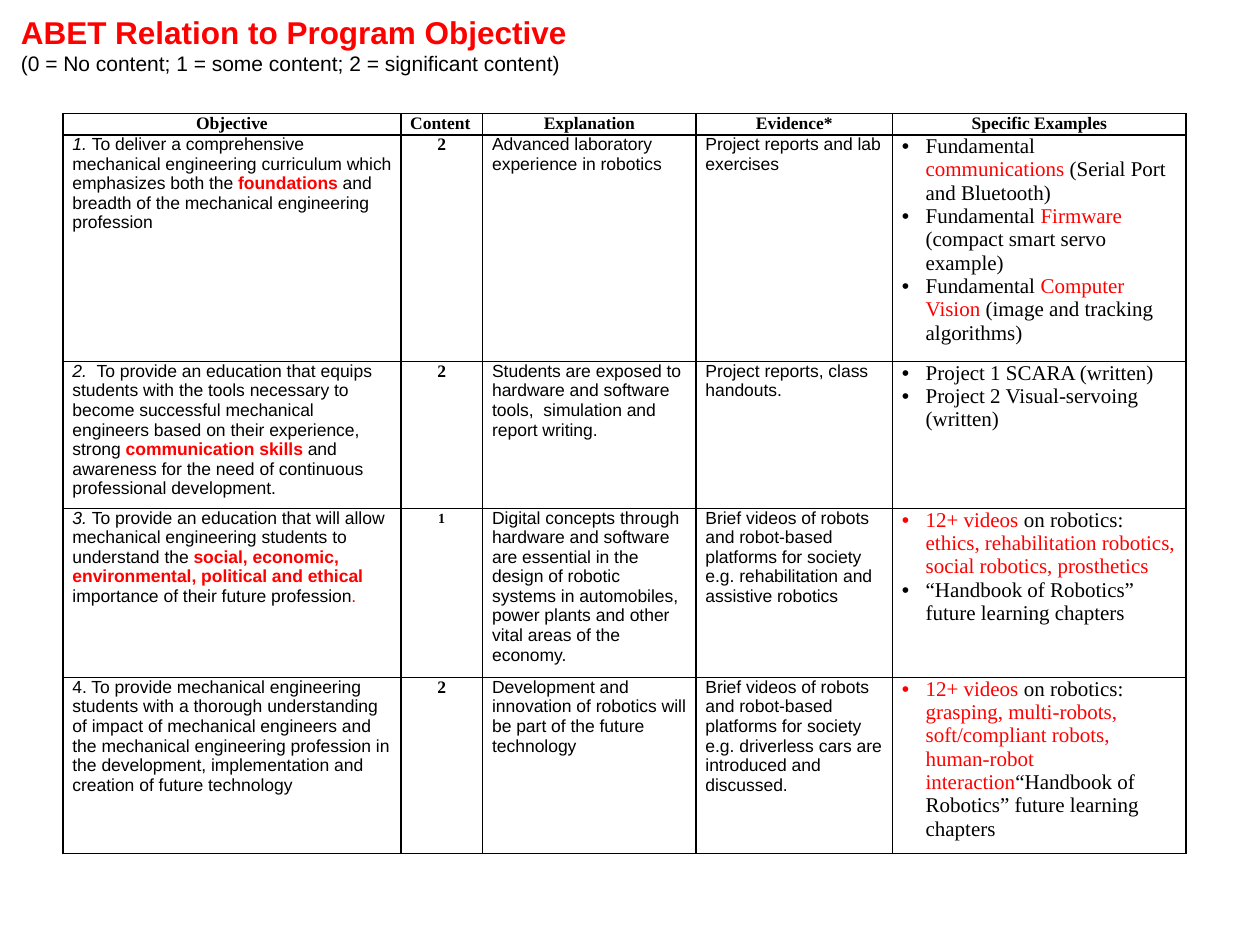
from lxml import etree
from pptx import Presentation
from pptx.dml.color import RGBColor
from pptx.enum import text
from pptx.oxml import ns
from pptx.util import Cm, Pt

COLORS = {"red": "FF0000", "black": "000000"}
SANS, SERIF = "Arial", "Times New Roman"

TITLE = [
    ("ABET Relation to Program Objective", 18, "red bold"),
    ("(0 = No content; 1 = some content; 2 = significant content)", 12, ""),
]
HEADERS = ["Objective", "Content", "Explanation", "Evidence*", "Specific Examples"]
ROWS = [
    {
        "objective": [
            ("1. ", "italic"),
            ("To deliver a comprehensive mechanical engineering curriculum which emphasizes both the ", ""),
            ("foundations ", "red bold"),
            ("and breadth of the mechanical engineering profession", ""),
        ],
        "content": ("2", "bold"),
        "explanation": "Advanced laboratory experience in robotics",
        "evidence": "Project reports and lab exercises",
        "examples": [
            [("Fundamental ", ""), ("communications", "red"), (" (Serial Port and Bluetooth)", "")],
            [("Fundamental ", ""), ("Firmware ", "red"), ("(compact smart servo example)", "")],
            [("Fundamental ", ""), ("Computer Vision", "red"), (" (image and tracking algorithms)", "")],
        ],
    },
    {
        "objective": [
            ("2.  ", "italic"),
            ("To provide an education that equips students with the tools necessary to become "
             "successful mechanical engineers based on their experience, strong ", ""),
            ("communication skills ", "red bold"),
            ("and awareness for the need of continuous professional development.", ""),
        ],
        "content": ("2", "bold"),
        "explanation": "Students are exposed to hardware and software tools,  simulation and report writing.",
        "evidence": "Project reports, class handouts.",
        "examples": [
            [("Project 1 SCARA (written)", "")],
            [("Project 2 Visual-servoing (written)", "")],
        ],
    },
    {
        "objective": [
            ("3. ", "italic"),
            ("To provide an education that will allow mechanical engineering students to understand the ", ""),
            ("social, economic, environmental, political and ethical ", "red bold"),
            ("importance of their future profession", ""),
            (".", "red"),
        ],
        "content": ("1", "bold small"),
        "explanation": "Digital concepts through hardware and software are essential in the design of "
                       "robotic systems in automobiles, power plants and other vital areas of the economy.",
        "evidence": "Brief videos of robots and robot-based platforms for society "
                    "e.g. rehabilitation and assistive robotics",
        "examples": [
            [("12+ videos ", "red"), ("on robotics: ", ""),
             ("ethics, rehabilitation robotics, social robotics, prosthetics", "red")],
            [("“Handbook of Robotics” future learning chapters", "")],
        ],
    },
    {
        "objective": [
            ("4. To provide mechanical engineering students with a thorough understanding of impact of "
             "mechanical engineers and the mechanical engineering profession in the development, "
             "implementation and creation of future technology", ""),
        ],
        "content": ("2", "bold"),
        "explanation": "Development and innovation of robotics will be part of the future technology",
        "evidence": "Brief videos of robots and robot-based platforms for society "
                    "e.g. driverless cars are introduced and discussed.",
        "examples": [
            [("12+ videos ", "red"), ("on robotics: ", ""),
             ("grasping, multi-robots, soft/compliant robots, human-robot interaction", "red"),
             ("“Handbook of Robotics” future learning chapters", "")],
        ],
    },
]
COLUMN_WIDTHS = [6.81, 1.65, 4.3, 3.96, 5.92]
ROW_HEIGHTS = [0.43, 4.57, 2.96, 3.41, 3.55]


def style_run(run, size, name, style):
    words = style.split()
    font = run.font
    font.size, font.name = Pt(size), name
    font.bold, font.italic = "bold" in words, "italic" in words
    font.color.rgb = RGBColor.from_string(COLORS["red" if "red" in words else "black"])
    if "small" in words:
        run._r.get_or_add_rPr().set("cap", "small")


def add_bullet(paragraph):
    properties = paragraph._p.get_or_add_pPr()
    properties.set("marL", str(Cm(0.48)))
    properties.set("indent", str(-Cm(0.48)))
    etree.SubElement(properties, ns.qn("a:buFont"), typeface=SANS)
    etree.SubElement(properties, ns.qn("a:buChar"), char="•")


def format_cell(cell):
    cell.margin_left = cell.margin_right = Cm(0.19)
    cell.margin_top = cell.margin_bottom = 0
    cell.fill.background()
    properties = cell._tc.get_or_add_tcPr()
    for index, side in enumerate(["lnL", "lnR", "lnT", "lnB"]):
        line = etree.Element(ns.qn(f"a:{side}"), w=str(Pt(1)))
        fill = etree.SubElement(line, ns.qn("a:solidFill"))
        etree.SubElement(fill, ns.qn("a:srgbClr"), val=COLORS["black"])
        properties.insert(index, line)


def fill_cell(cell, paragraphs, size, name, centred=False, bulleted=False):
    format_cell(cell)
    frame = cell.text_frame
    for index, runs in enumerate(paragraphs):
        paragraph = frame.add_paragraph() if index else frame.paragraphs[0]
        if centred:
            paragraph.alignment = text.PP_ALIGN.CENTER
        if bulleted:
            add_bullet(paragraph)
        for content, style in runs:
            run = paragraph.add_run()
            run.text = content
            style_run(run, size, name, style)


def add_title(slide):
    title = slide.shapes.title
    title.left, title.top, title.width, title.height = Cm(0.42), Cm(0.26), Cm(12.27), Cm(2)
    frame = title.text_frame
    frame.margin_left = frame.margin_right = frame.margin_top = frame.margin_bottom = 0
    frame.vertical_anchor = text.MSO_ANCHOR.TOP
    frame.auto_size = text.MSO_AUTO_SIZE.NONE
    frame.text = "\n".join(line for line, _, _ in TITLE)
    for paragraph, (_, size, style) in zip(frame.paragraphs, TITLE):
        paragraph.alignment = text.PP_ALIGN.LEFT
        style_run(paragraph.runs[0], size, SANS, style)


def add_objectives_table(slide):
    frame = slide.shapes.add_table(
        len(ROW_HEIGHTS), len(COLUMN_WIDTHS), Cm(1.27), Cm(2.29),
        Cm(sum(COLUMN_WIDTHS)), Cm(sum(ROW_HEIGHTS)))
    table = frame.table
    table.horz_banding = table.first_row = False
    for column, width in zip(table.columns, COLUMN_WIDTHS):
        column.width = Cm(width)
    for row, height in zip(table.rows, ROW_HEIGHTS):
        row.height = Cm(height)
    for index, header in enumerate(HEADERS):
        fill_cell(table.cell(0, index), [[(header, "bold")]], 10, SERIF, centred=header != "Content")
    for index, row in enumerate(ROWS, start=1):
        objective, content, explanation, evidence, examples = table.rows[index].cells
        fill_cell(objective, [row["objective"]], 10, SANS)
        fill_cell(content, [[row["content"]]], 10, SERIF, centred=True)
        fill_cell(explanation, [[(row["explanation"], "")]], 10, SANS)
        fill_cell(evidence, [[(row["evidence"], "")]], 10, SANS)
        fill_cell(examples, row["examples"], 12, SERIF, bulleted=True)


def main():
    """Build the slide relating ABET criteria to the program objectives."""
    presentation = Presentation()
    presentation.slide_width, presentation.slide_height = Cm(25.4), Cm(19.05)
    slide = presentation.slides.add_slide(presentation.slide_layouts[5])
    add_title(slide)
    add_objectives_table(slide)
    presentation.save("out.pptx")


if __name__ == "__main__":
    main()
